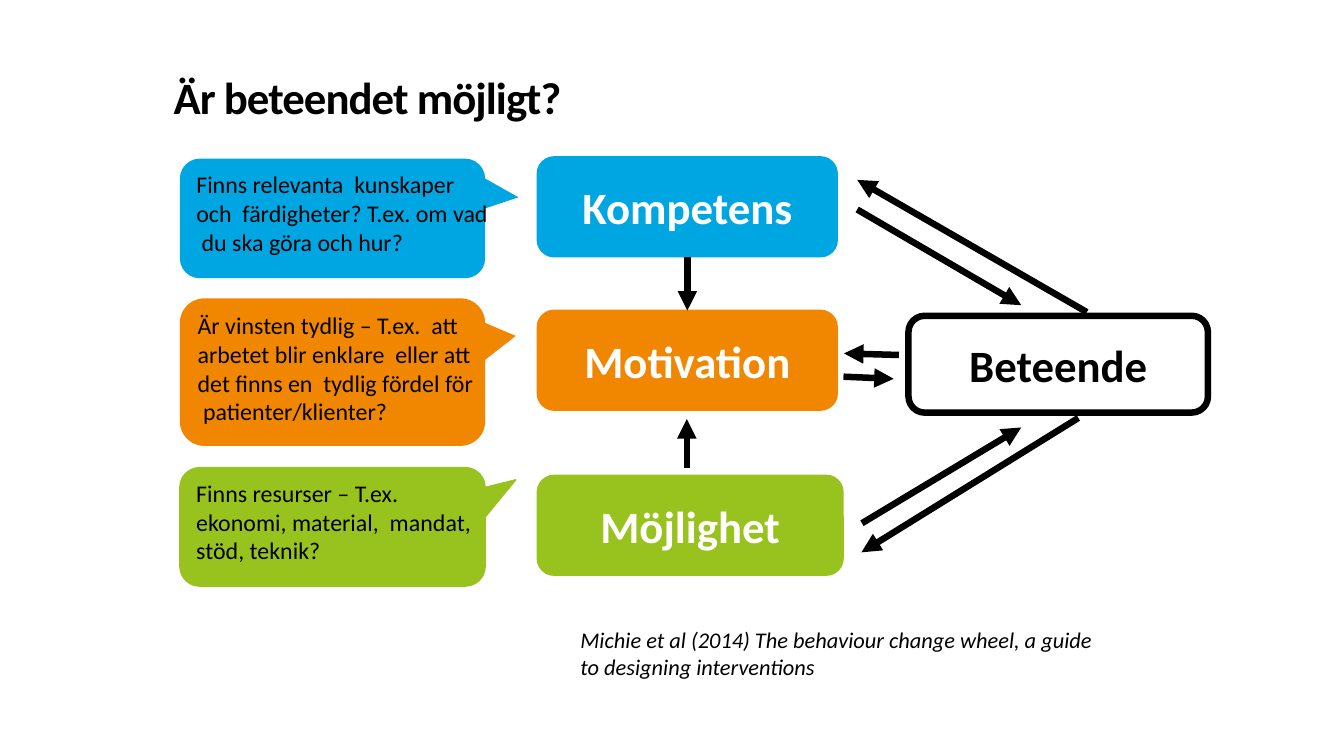
from lxml import etree
from pptx import Presentation
from pptx.dml.color import RGBColor
from pptx.enum.shapes import MSO_CONNECTOR, MSO_SHAPE
from pptx.enum.text import MSO_ANCHOR, PP_ALIGN
from pptx.oxml.ns import qn
from pptx.util import Cm, Pt

ROUND = MSO_SHAPE.ROUNDED_RECTANGLE
BUBBLE = MSO_SHAPE.ROUNDED_RECTANGULAR_CALLOUT
STRAIGHT = MSO_CONNECTOR.STRAIGHT
LEFT, CENTER = PP_ALIGN.LEFT, PP_ALIGN.CENTER
TOP, MIDDLE = MSO_ANCHOR.TOP, MSO_ANCHOR.MIDDLE

COLORS = {
    "blue": "00A6E2",
    "orange": "F18700",
    "green": "98C21D",
    "black": "000000",
    "white": "FFFFFF",
}


class Board:
    font = "Calibri"

    def __init__(self, slide):
        self.slide = slide

    def color(self, name):
        return RGBColor.from_string(COLORS[name])

    def label(self, shape, text, size, color="black", bold=False, italic=False,
              align=LEFT, anchor=TOP, margins=(0, 0, 0, 0)):
        frame = shape.text_frame
        frame.text = text
        frame.word_wrap = True
        frame.vertical_anchor = anchor
        (frame.margin_left, frame.margin_top,
         frame.margin_right, frame.margin_bottom) = map(Cm, margins)
        for par in frame.paragraphs:
            par.alignment = align
            for run in par.runs:
                font = run.font
                font.name, font.size = self.font, Pt(size)
                font.bold, font.italic = bold, italic
                font.color.rgb = self.color(color)

    def shape(self, kind, box, fill=None, line=None, width=1):
        item = self.slide.shapes.add_shape(kind, *map(Cm, box))
        item.shadow.inherit = False
        if fill:
            item.fill.solid()
            item.fill.fore_color.rgb = self.color(fill)
        else:
            item.fill.background()
        if line:
            item.line.color.rgb = self.color(line)
            item.line.width = Pt(width)
        else:
            item.line.fill.background()
        return item

    def title(self, text, box):
        item = self.slide.shapes.title
        item.left, item.top, item.width, item.height = map(Cm, box)
        self.label(item, text, 24, bold=True)
        for run in item.text_frame.paragraphs[0].runs:
            run.font._element.set("spc", "-50")

    def note(self, text, box):
        item = self.slide.shapes.add_textbox(*map(Cm, box))
        self.label(item, text, 12, italic=True)

    def box(self, text, box, fill, line, ink, width=1):
        item = self.shape(ROUND, box, fill, line, width)
        self.label(item, text, 24, ink, bold=True, align=CENTER, anchor=MIDDLE)
        return item

    def bubble(self, text, box, tip, fill, line=None, right=0):
        item = self.shape(BUBBLE, box, fill, line, 0.75)
        left, top, width, height = box
        item.adjustments[0] = (tip[0] - left) / width - 0.5
        item.adjustments[1] = (tip[1] - top) / height - 0.5
        self.label(item, text, 12.8, margins=(0.2, 0.1, right, 0.1))

    def arrow(self, start, end):
        item = self.slide.shapes.add_connector(STRAIGHT, *map(Cm, start + end))
        item.line.color.rgb = self.color("black")
        item.line.width = Pt(3.5)
        stroke = item._element.spPr.find(qn("a:ln"))
        etree.SubElement(stroke, qn("a:tailEnd"), type="triangle")
        etree.SubElement(item._element.spPr, qn("a:effectLst"))
        return item


def main():
    deck = Presentation()
    deck.slide_width, deck.slide_height = Cm(25.4), Cm(14.29)
    board = Board(deck.slides.add_slide(deck.slide_layouts[5]))

    # Title and source
    board.title("Är beteendet möjligt?", (3.28, 1.32, 14.2, 1.04))
    board.note("Michie et al (2014) The behaviour change wheel, "
               "a guide to designing interventions", (10.97, 11.84, 10.03, 1.04))

    # Questions: text, top, height, tip, fill, line, right margin
    asks = [
        ("Finns relevanta  kunskaper och  färdigheter? T.ex. om vad\v du ska göra och hur?",
         3, 2.26, (9.8, 3.73), "blue", None, -0.24),
        ("Är vinsten tydlig – T.ex.  att arbetet blir enklare  eller att "
         "det finns en  tydlig fördel för  patienter/klienter?",
         5.64, 2.79, (9.75, 6.35), "orange", None, 0),
        ("Finns resurser – T.ex.  ekonomi, material,  mandat, stöd, teknik?",
         8.84, 2.24, (9.75, 9.07), "green", "green", 0),
    ]
    for text, top, height, tip, fill, line, right in asks:
        board.bubble(text, (3.4, top, 5.77, height), tip, fill, line, right)

    # Factors and the behaviour they lead to
    factors = [
        ("Kompetens", 2.97, 5.66, "blue"),
        ("Motivation", 5.87, 5.66, "orange"),
        ("Möjlighet", 8.99, 5.77, "green"),
    ]
    skill, drive, _ = [
        board.box(text, (10.16, top, width, 1.88), fill, fill, "white")
        for text, top, width, fill in factors
    ]
    board.box("Beteende", (17.17, 5.97, 5.66, 1.83), None, "black", "black", 3.5)

    # Arrow between the two upper factors
    link = board.arrow((12.99, 4.85), (12.99, 5.87))
    link.begin_connect(skill, 2)
    link.end_connect(drive, 0)

    # Free arrows
    for start, end in [
        ((12.98, 8.84), (12.98, 7.92)),
        ((16.2, 3.96), (19.3, 5.77)),
        ((20.54, 5.9), (16.2, 3.4)),
        ((15.94, 7.12), (16.89, 7.16)),
        ((16.99, 6.71), (15.95, 6.68)),
        ((16.29, 9.89), (19.3, 8.08)),
        ((20.38, 7.9), (16.28, 10.44)),
    ]:
        board.arrow(start, end)

    deck.save("out.pptx")


if __name__ == "__main__":
    main()
